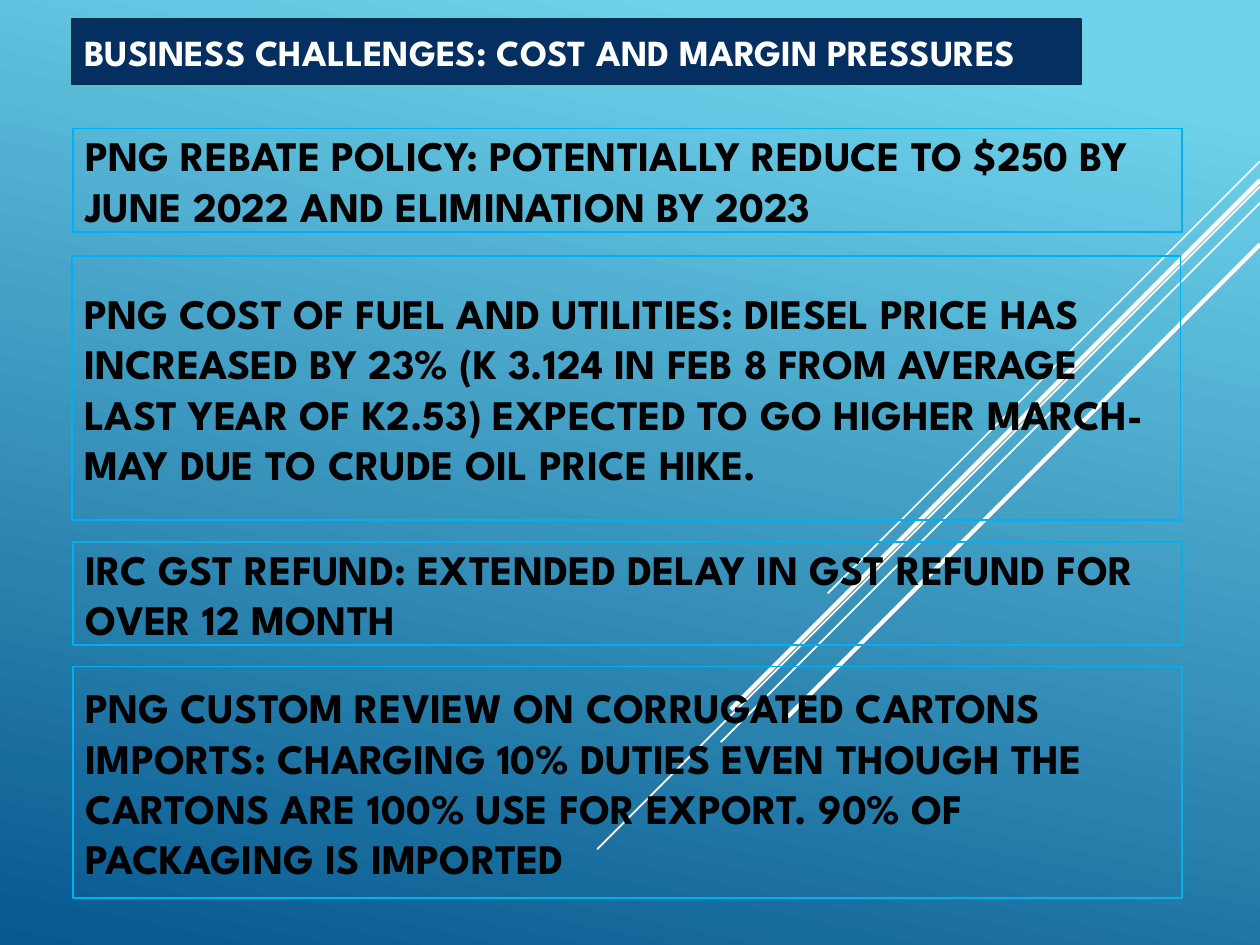
from pptx import Presentation
from pptx.dml.color import RGBColor
from pptx.enum.shapes import MSO_CONNECTOR as Conn, MSO_SHAPE as Shape
from pptx.enum.text import MSO_ANCHOR as Anchor, PP_ALIGN as Align
from pptx.oxml.ns import qn
from pptx.util import Inches, Pt
from lxml import etree

FONT = "League Spartan"
STOPS = [(0.1, "6ED2EB"), (1, "06588E")]
RAYS = [
    (10, 1.28, 3.43, 1),
    (10, 1.48, 5.26, 1),
    (10, 1.61, 4.28, 1),
    (10, 1.43, 4.2, 2.5),
    (10, 1.94, 3.75, 2.5),
]
TITLE = "BUSINESS CHALLENGES: COST AND MARGIN PRESSURES"
ISSUES = [
    (0.58, 1.02, 0.82, "PNG REBATE POLICY: POTENTIALLY REDUCE TO $250 BY JUNE 2022 AND ELIMINATION BY 2023"),
    (0.57, 2.03, 2.1, "PNG COST OF FUEL AND UTILITIES: DIESEL PRICE HAS INCREASED BY 23% (K 3.124 IN FEB 8 FROM AVERAGE LAST YEAR OF K2.53) EXPECTED TO GO HIGHER MARCH-MAY DUE TO CRUDE OIL PRICE HIKE."),
    (0.58, 4.3, 0.82, "IRC GST REFUND: EXTENDED DELAY IN GST REFUND FOR OVER 12 MONTH"),
    (0.58, 5.29, 1.84, "PNG CUSTOM REVIEW ON CORRUGATED CARTONS IMPORTS: CHARGING 10% DUTIES EVEN THOUGH THE CARTONS ARE 100% USE FOR EXPORT. 90% OF PACKAGING IS IMPORTED"),
]


def rgb(code):
    return RGBColor.from_string(code)


def paint(slide):
    fill = slide.background.fill
    fill.gradient()
    fill.gradient_angle = 258
    for stop, (pos, code) in zip(fill.gradient_stops, STOPS):
        stop.position = pos
        stop.color.rgb = rgb(code)


def add_ray(slide, x, y, run, width):
    ends = [Inches(v) for v in (x, y, x - run, y + run)]
    ray = slide.shapes.add_connector(Conn.STRAIGHT, *ends)
    ray.line.color.rgb = rgb("FFFFFF")
    ray.line.width = Pt(width)
    etree.SubElement(ray._element.spPr, qn("a:effectLst"))


def add_box(slide, text, *, at, size=24, color="000000", edge="00B0F0", fill=None):
    box = slide.shapes.add_shape(Shape.RECTANGLE, *[Inches(v) for v in at])
    box.shadow.inherit = False
    if fill:
        box.fill.solid()
        box.fill.fore_color.rgb = rgb(fill)
    else:
        box.fill.background()
    box.line.color.rgb = rgb(edge)
    box.line.width = Pt(1)
    frame = box.text_frame
    frame.word_wrap = True
    frame.vertical_anchor = Anchor.MIDDLE
    para = frame.paragraphs[0]
    para.alignment = Align.LEFT
    run = para.add_run()
    run.text = text
    font = run.font
    font.name, font.size, font.bold = FONT, Pt(size), True
    font.color.rgb = rgb(color)


def main():
    deck = Presentation()
    deck.slide_width, deck.slide_height = Inches(10), Inches(7.5)
    slide = deck.slides.add_slide(deck.slide_layouts[6])
    paint(slide)
    for ray in RAYS:
        add_ray(slide, *ray)
    add_box(slide, TITLE, at=(0.57, 0.15, 8.01, 0.52), size=21,
            color="FFFFFF", edge="043148", fill="052F61")
    for left, top, height, text in ISSUES:
        add_box(slide, text, at=(left, top, 8.8, height))
    deck.save("out.pptx")


if __name__ == "__main__":
    main()
